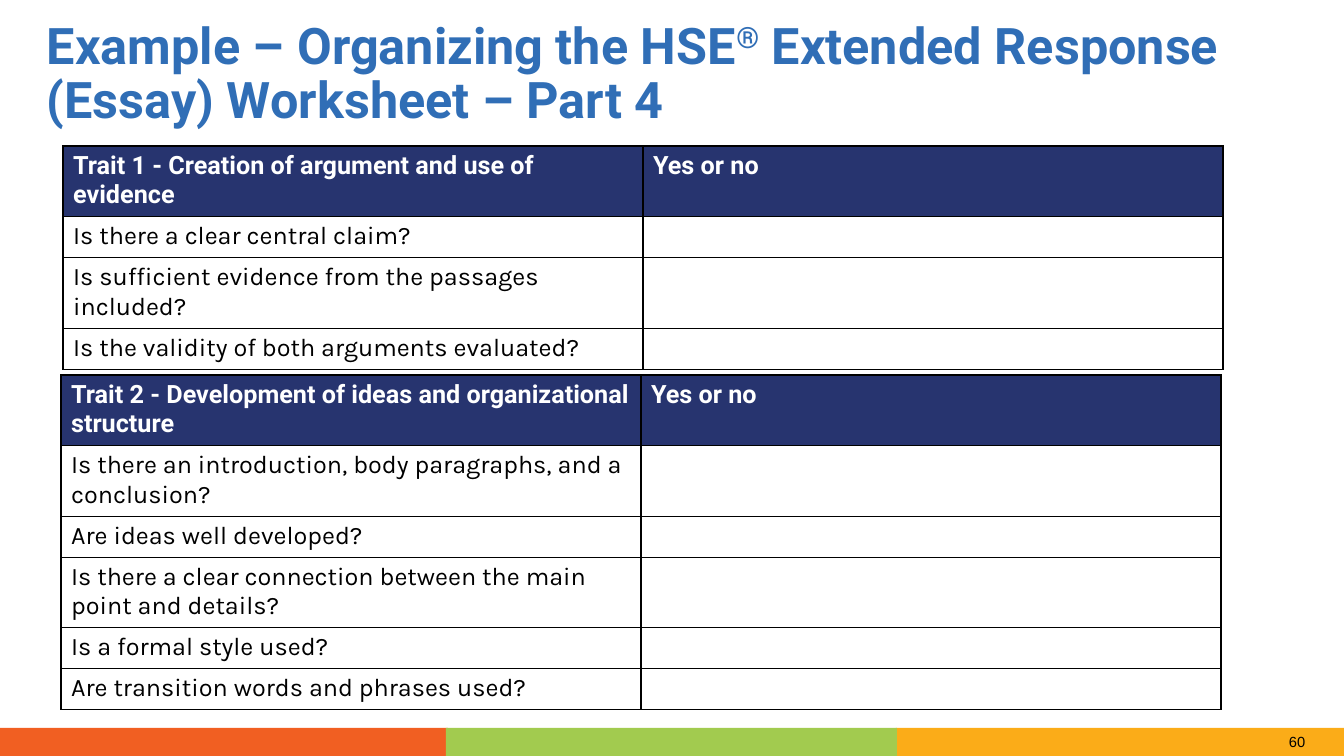
from dataclasses import dataclass
from lxml.etree import SubElement as Sub
from pptx import Presentation
from pptx.dml.color import RGBColor as Rgb
from pptx.enum.shapes import MSO_SHAPE as Shape
from pptx.enum.text import MSO_ANCHOR as Anchor
from pptx.oxml.ns import qn
from pptx.util import Emu, Pt


@dataclass(frozen=True)
class Theme:
    blue: str = "306EB6"
    navy: str = "27346F"
    white: str = "FFFFFF"
    black: str = "000000"
    orange: str = "FBAC18"
    red: str = "F15F22"
    green: str = "A2CB4F"
    head: str = "Roboto"
    body: str = "Karla"
    foot: str = "Arial"
    big: float = 36
    mid: float = 18
    small: float = 10.5
    rule: float = 1


def px(num):
    return Emu(round(num * 9144000 / 1008))


class Deck:
    def __init__(self, theme):
        self.theme = theme
        self.prs = Presentation()
        self.prs.slide_width, self.prs.slide_height = px(1344), px(756)
        self.slide = self.prs.slides.add_slide(self.prs.slide_layouts[6])

    def run(self, para, text, face, size, color, bold=False, lift=0):
        run = para.add_run()
        run.text = text
        font = run.font
        font.name, font.size, font.bold = face, Pt(size), bold
        font.color.rgb = Rgb.from_string(color)
        if lift:
            font._element.set("baseline", str(lift * 1000))

    def band(self, left, top, width, height, color):
        box = self.slide.shapes.add_shape(
            Shape.RECTANGLE, px(left), px(top), px(width), px(height))
        box.shadow.inherit = False
        box.fill.solid()
        box.fill.fore_color.rgb = Rgb.from_string(color)
        box.line.fill.background()

    def text(self, left, top, width, height, pad=0, wrap=True):
        box = self.slide.shapes.add_textbox(
            px(left), px(top), px(width), px(height))
        frame = box.text_frame
        frame.word_wrap = wrap
        frame.vertical_anchor = Anchor.MIDDLE
        frame.margin_left = frame.margin_right = px(pad)
        frame.margin_top = frame.margin_bottom = 0
        return frame.paragraphs[0]

    def edge(self, cell):
        props = cell._tc.get_or_add_tcPr()
        for side in ("lnL", "lnR", "lnT", "lnB"):
            line = Sub(props, qn(f"a:{side}"), w=str(Pt(self.theme.rule)))
            fill = Sub(line, qn("a:solidFill"))
            Sub(fill, qn("a:srgbClr"), val=self.theme.black)

    def table(self, left, top, width, rows):
        t = self.theme
        high = sum(tall for _, tall in rows)
        grid = self.slide.shapes.add_table(
            len(rows), 2, px(left), px(top), px(width), px(high)).table
        grid.first_row = grid.horz_banding = False
        for i, (label, tall) in enumerate(rows):
            grid.rows[i].height = px(tall)
            words = (label, "" if i else "Yes or no")
            for cell, text in zip(grid.rows[i].cells, words):
                self.edge(cell)
                para = cell.text_frame.paragraphs[0]
                if i:
                    cell.fill.background()
                    para.font.size = Pt(t.mid)
                    if text:
                        self.run(para, text, t.body, t.mid, t.black)
                else:
                    cell.fill.solid()
                    cell.fill.fore_color.rgb = Rgb.from_string(t.navy)
                    self.run(para, text, t.head, t.mid, t.white, True)


def main():
    t = Theme()
    deck = Deck(t)

    # Footer bands and page number
    for left, width, color in (
            (896, 448, t.orange), (0, 448, t.red), (446, 451, t.green)):
        deck.band(left, 728, width, 28, color)
    page = deck.text(1279, 728, 38, 28, pad=10, wrap=False)
    deck.run(page, "60", t.foot, t.small, t.black)

    # Title
    title = deck.text(47, 19, 1250, 112)
    title.line_spacing = 0.9
    for text, lift in (
            ("Example – Organizing the HSE", 0), ("®", 30),
            (" Extended Response (Essay) Worksheet – Part 4", 0)):
        deck.run(title, text, t.head, t.big, t.blue, True, lift)

    # Trait checklists: one-line and two-line row heights
    one, two = 41, 69
    deck.table(63, 146, 1160, (
        ("Trait 1 - Creation of argument and use of evidence", two),
        ("Is there a clear central claim?", one),
        ("Is sufficient evidence from the passages included?", two),
        ("Is the validity of both arguments evaluated?", one)))
    deck.table(61, 375, 1160, (
        ("Trait 2 - Development of ideas and organizational structure", two),
        ("Is there an introduction, body paragraphs, and a conclusion?", two),
        ("Are ideas well developed?", one),
        ("Is there a clear connection between the main point and details?",
         two),
        ("Is a formal style used?", one),
        ("Are transition words and phrases used?", one)))

    deck.prs.save("out.pptx")


if __name__ == "__main__":
    main()
